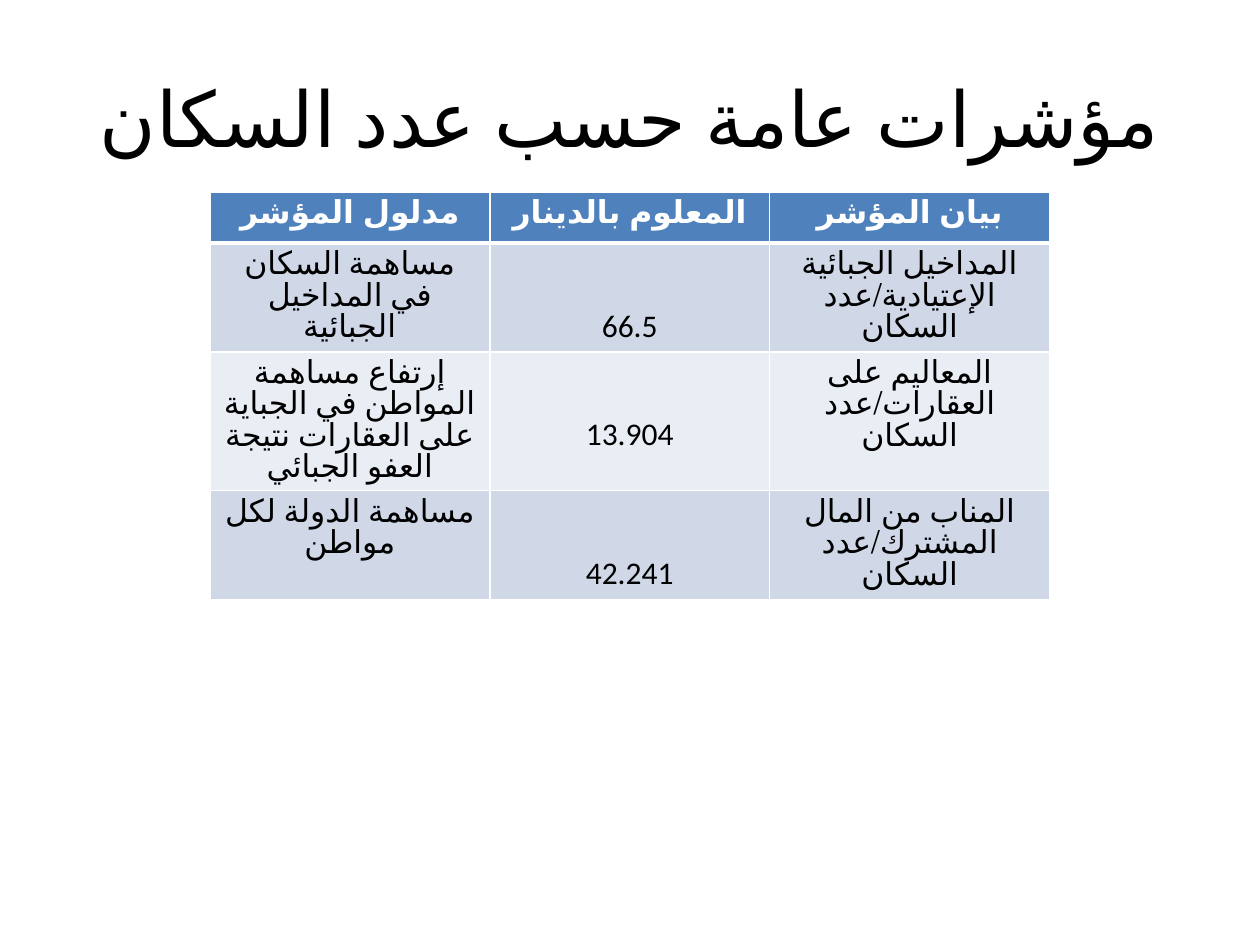
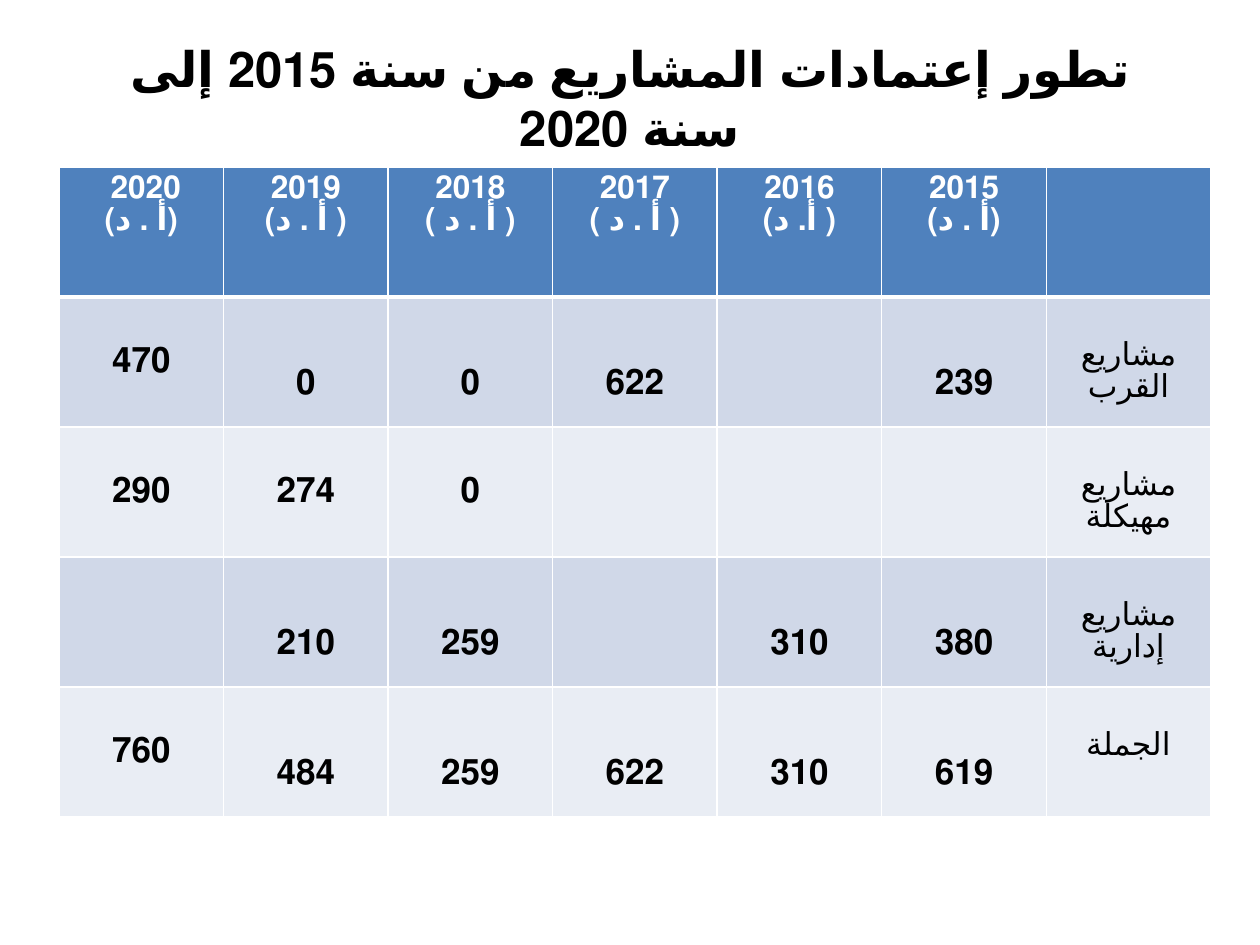
from lxml.etree import SubElement
from pptx import Presentation
from pptx.dml.color import RGBColor
from pptx.enum.lang import MSO_LANGUAGE_ID
from pptx.enum.text import MSO_ANCHOR, MSO_AUTO_SIZE, PP_ALIGN
from pptx.oxml.ns import qn
from pptx.util import Cm, Pt

HUES = {"ink": "000000", "white": "FFFFFF", "head": "4F81BD",
        "odd": "D0D8E8", "even": "E9EDF4"}
FONT = "Calibri"

RATES = [
    ["مدلول المؤشر", "المعلوم بالدينار", "بيان المؤشر"],
    ["مساهمة السكان في المداخيل الجبائية", "66.5",
     "المداخيل الجبائية الإعتيادية/عدد السكان"],
    ["إرتفاع مساهمة المواطن في الجباية على العقارات نتيجة العفو الجبائي",
     "13.904", "المعاليم على العقارات/عدد السكان"],
    ["مساهمة الدولة لكل مواطن", "42.241", "المناب من المال المشترك/عدد السكان"],
]
FUNDS = [
    ["2020 \n(أ . د)", "2019\n( أ . د)", "2018\n( أ . د )",
     "2017\n( أ . د )", "2016\n( أ. د)", "2015\n(أ . د)", ""],
    ["470", "0", "0", "622", "", "239", "مشاريع القرب"],
    ["290", "274", "0", "", "", "", "مشاريع مهيكلة"],
    ["", "210", "259", "", "310", "380", "مشاريع إدارية"],
    ["760", "484", "259", "622", "310", "619", "الجملة"],
]


def hue(name):
    return RGBColor.from_string(HUES[name])


def write(par, text, size, tint="ink", bold=False):
    """Add one centred Arabic run to a paragraph."""
    par.alignment = PP_ALIGN.CENTER
    run = par.add_run()
    run.text = text
    font = run.font
    font.name, font.size, font.bold = FONT, Pt(size), bold
    font.color.rgb = hue(tint)
    font.language_id = MSO_LANGUAGE_ID.ARABIC_TUNISIA


def add_title(slide, box, text, size, bold=False):
    title = slide.shapes.title
    title.left, title.top, title.width, title.height = map(Cm, box)
    frame = title.text_frame
    frame.auto_size = MSO_AUTO_SIZE.NONE
    frame.vertical_anchor = MSO_ANCHOR.MIDDLE
    write(frame.paragraphs[0], text, size, bold=bold)


def edge(cell, row):
    """White cell borders, thick below the header row."""
    props = cell._tc.get_or_add_tcPr()
    thick = {"lnB": row == 0, "lnT": row == 1}
    for side in ("lnL", "lnR", "lnT", "lnB"):
        width = Pt(3 if thick.get(side) else 1)
        line = SubElement(props, qn("a:" + side), w=str(width))
        fill = SubElement(line, qn("a:solidFill"))
        SubElement(fill, qn("a:srgbClr"), val=HUES["white"])


def add_grid(slide, box, data, rows, style):
    """Place a banded table; style(cell, row, col) gives size, bold, spacing, rtl."""
    left, top, width, height = map(Cm, box)
    count = len(data[0])
    grid = slide.shapes.add_table(len(data), count, left, top, width, height).table
    for col in grid.columns:
        col.width = width // count
    for row, tall in enumerate(rows):
        grid.rows[row].height = Cm(tall)
        band = "head" if row == 0 else "odd" if row % 2 else "even"
        for col, text in enumerate(data[row]):
            cell = grid.cell(row, col)
            edge(cell, row)
            cell.fill.solid()
            cell.fill.fore_color.rgb = hue(band)
            size, bold, gap, rtl = style(cell, row, col)
            frame = cell.text_frame
            for num, part in enumerate(text.split("\n") if text else []):
                par = frame.add_paragraph() if num else frame.paragraphs[0]
                par.line_spacing = gap
                if rtl:
                    par._p.get_or_add_pPr().set("rtl", "1")
                write(par, part, size, "ink" if row else "white", bold)


def rate_style(cell, row, col):
    gap = 2.5 if row and col == 1 else Pt(18)
    return 18, row == 0, gap, False


def fund_style(cell, row, col):
    label = col == 6
    figure = row and not label
    if row and label:
        cell.margin_top = Cm(0.88)
    elif row:
        cell.vertical_anchor = MSO_ANCHOR.MIDDLE
        # Most figures sit one line lower
        if col and row != 2:
            cell.margin_top = Cm(1.02)
    size = 20 if figure else 18
    return size, bool(figure or not row), Pt(size), True


def rate_slide(slide):
    add_title(slide, (1.27, 0.76, 22.86, 3.18), "مؤشرات عامة حسب عدد السكان", 44)
    add_grid(slide, (4.23, 3.87, 16.93, 8.2), RATES,
             (1.03, 2.18, 2.8, 2.18), rate_style)


def fund_slide(slide):
    add_title(slide, (1.27, 0.76, 22.86, 2.41),
              "تطور إعتمادات المشاريع من سنة 2015 إلى سنة 2020", 28, True)
    add_grid(slide, (1.19, 3.37, 23.22, 13.1), FUNDS, [2.62] * 5, fund_style)


def main():
    deck = Presentation()
    deck.slide_width, deck.slide_height = Cm(25.4), Cm(19.05)
    for build in (rate_slide, fund_slide):
        build(deck.slides.add_slide(deck.slide_layouts[5]))
    deck.save("out.pptx")


if __name__ == "__main__":
    main()
